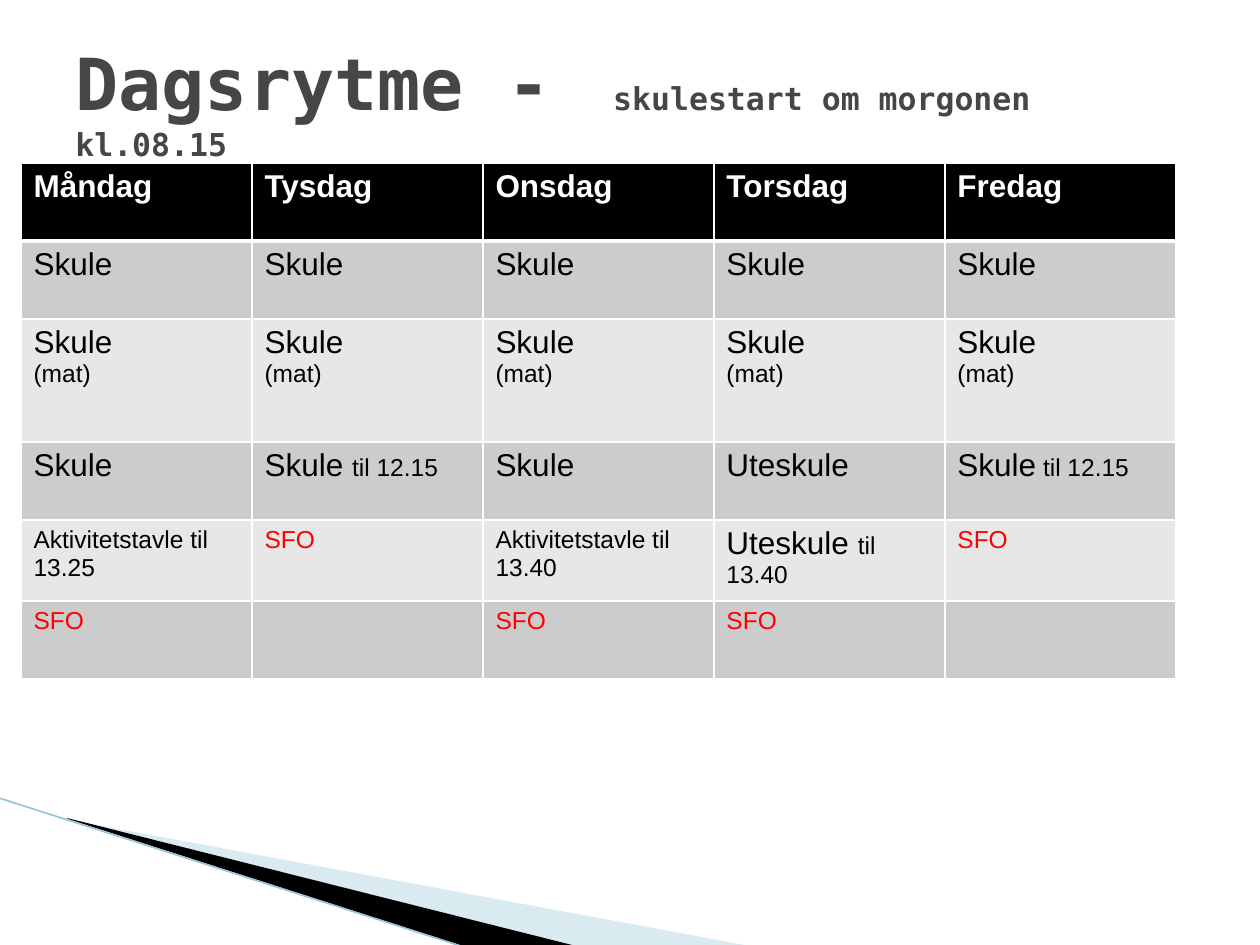
from lxml import etree
from pptx import Presentation
from pptx.dml.color import RGBColor
from pptx.enum.shapes import MSO_CONNECTOR
from pptx.enum.text import MSO_ANCHOR
from pptx.oxml.ns import qn
from pptx.util import Emu, Pt

STRAIGHT = MSO_CONNECTOR.STRAIGHT
MIDDLE = MSO_ANCHOR.MIDDLE
SCALE = 914400 / 126
COLORS = {
    "title": "464646", "header": "000000", "dark": "CCCCCC", "light": "E7E7E7",
    "white": "FFFFFF", "black": "000000", "red": "FF0000",
    "pale": "A0CBDC", "edge": "97C5D8",
}
TITLE = {"name": "DejaVu Sans Mono", "size": Pt(41), "bold": True, "color": "title"}
SUBTITLE = {**TITLE, "size": Pt(18)}
LARGE = {"name": "Arial", "size": Pt(18), "bold": False, "color": "black"}
SMALL = {**LARGE, "size": Pt(14)}
CARE = {**SMALL, "color": "red"}
HEADER = {**LARGE, "bold": True, "color": "white"}

DAYS = ["Måndag", "Tysdag", "Onsdag", "Torsdag", "Fredag"]
SCHOOL = [[("Skule", LARGE)]]
MEAL = [[("Skule", LARGE)], [("(mat)", SMALL)]]
SFO = [[("SFO", CARE)]]
EMPTY = [[]]
SCHEDULE = [
    [[[(day, HEADER)]] for day in DAYS],
    [SCHOOL] * 5,
    [MEAL] * 5,
    [SCHOOL, [[("Skule ", LARGE), ("til 12.15", SMALL)]], SCHOOL,
     [[("Uteskule", LARGE)]], [[("Skule", LARGE), (" til 12.15", SMALL)]]],
    [[[("Aktivitetstavle til 13.25", SMALL)]], SFO,
     [[("Aktivitetstavle til 13.40", SMALL)]],
     [[("Uteskule ", LARGE), ("til 13.40", SMALL)]], SFO],
    [SFO, EMPTY, SFO, SFO, EMPTY],
]
ROW_FILLS = ["header", "dark", "light", "dark", "light", "dark"]
ROW_HEIGHTS = [78, 78, 123, 78, 81, 78]


def px(length):
    """Turn pixels into EMU."""
    return Emu(round(length * SCALE))


def color(name):
    """Look up a named colour."""
    return RGBColor.from_string(COLORS[name])


def write(frame, paragraphs):
    """Fill a text frame with paragraphs of formatted spans."""
    for index, spans in enumerate(paragraphs):
        para = frame.paragraphs[0] if index == 0 else frame.add_paragraph()
        for text, style in spans:
            span = para.add_run()
            span.text = text
            for key, value in style.items():
                if key == "color":
                    span.font.color.rgb = color(value)
                else:
                    setattr(span.font, key, value)


def add_borders(cell, top, bottom):
    """Give a cell white borders with the given top and bottom points."""
    properties = cell._tc.get_or_add_tcPr()
    for side, width in {"L": 1, "R": 1, "T": top, "B": bottom}.items():
        line = etree.SubElement(properties, qn(f"a:ln{side}"), w=str(Pt(width)))
        fill = etree.SubElement(line, qn("a:solidFill"))
        etree.SubElement(fill, qn("a:srgbClr"), val=COLORS["white"])


def add_wedge(page, left, top, points, fill, opacity):
    """Draw a filled wedge whose points are relative to its corner."""
    builder = page.shapes.build_freeform(*points[0], scale=SCALE)
    builder.add_line_segments(points[1:], close=True)
    wedge = builder.convert_to_shape(px(left), px(top))
    wedge.shadow.inherit = False
    wedge.fill.solid()
    wedge.fill.fore_color.rgb = color(fill)
    wedge.line.fill.background()
    if opacity < 100:
        tint = wedge._element.spPr.find(f".//{qn('a:srgbClr')}")
        etree.SubElement(tint, qn("a:alpha"), val=str(opacity * 1000))


def add_swoosh(page, left, top):
    """Draw the corner decoration from its top left point."""
    add_wedge(page, left + 70, top + 22,
              [(0, 0), (681, 126), (506, 126), (0, -1)], "pale", 40)
    add_wedge(page, left + 68, top + 20,
              [(0, 0), (509, 128), (402, 130), (1, 1)], "black", 100)
    edge = page.shapes.add_connector(
        STRAIGHT, px(left), px(top), px(left + 468), px(top + 150))
    edge.line.color.rgb = color("edge")
    edge.line.width = Pt(0.95)
    etree.SubElement(edge._element.spPr, qn("a:effectLst"))


def add_timetable(page, left, top, width):
    """Place the weekly timetable with equal columns."""
    frame = page.shapes.add_table(
        len(SCHEDULE), len(DAYS), px(left), px(top), px(width), px(sum(ROW_HEIGHTS)))
    table = frame.table
    for column in table.columns:
        column.width = px(width / len(DAYS))
    for index, (entries, fill, height) in enumerate(
            zip(SCHEDULE, ROW_FILLS, ROW_HEIGHTS)):
        table.rows[index].height = px(height)
        for cell, paragraphs in zip(table.rows[index].cells, entries):
            add_borders(cell, 3 if index == 1 else 1, 3 if index == 0 else 1)
            cell.fill.solid()
            cell.fill.fore_color.rgb = color(fill)
            write(cell.text_frame, paragraphs)


def add_title(page, left, top, width, height):
    """Place the heading with its smaller start time."""
    box = page.shapes.add_textbox(px(left), px(top), px(width), px(height))
    box.text_frame.word_wrap = True
    box.text_frame.vertical_anchor = MIDDLE
    write(box.text_frame, [[("Dagsrytme - ", TITLE),
                            (" skulestart om morgonen kl.08.15", SUBTITLE)]])


def main():
    """Build the day rhythm slide."""
    deck = Presentation()
    deck.slide_width, deck.slide_height = px(1260), px(945)
    page = deck.slides.add_slide(deck.slide_layouts[6])
    add_swoosh(page, -1, 798)
    add_timetable(page, 21, 163, 1155)
    add_title(page, 63, 38, 1134, 125)
    deck.save("out.pptx")


if __name__ == "__main__":
    main()
